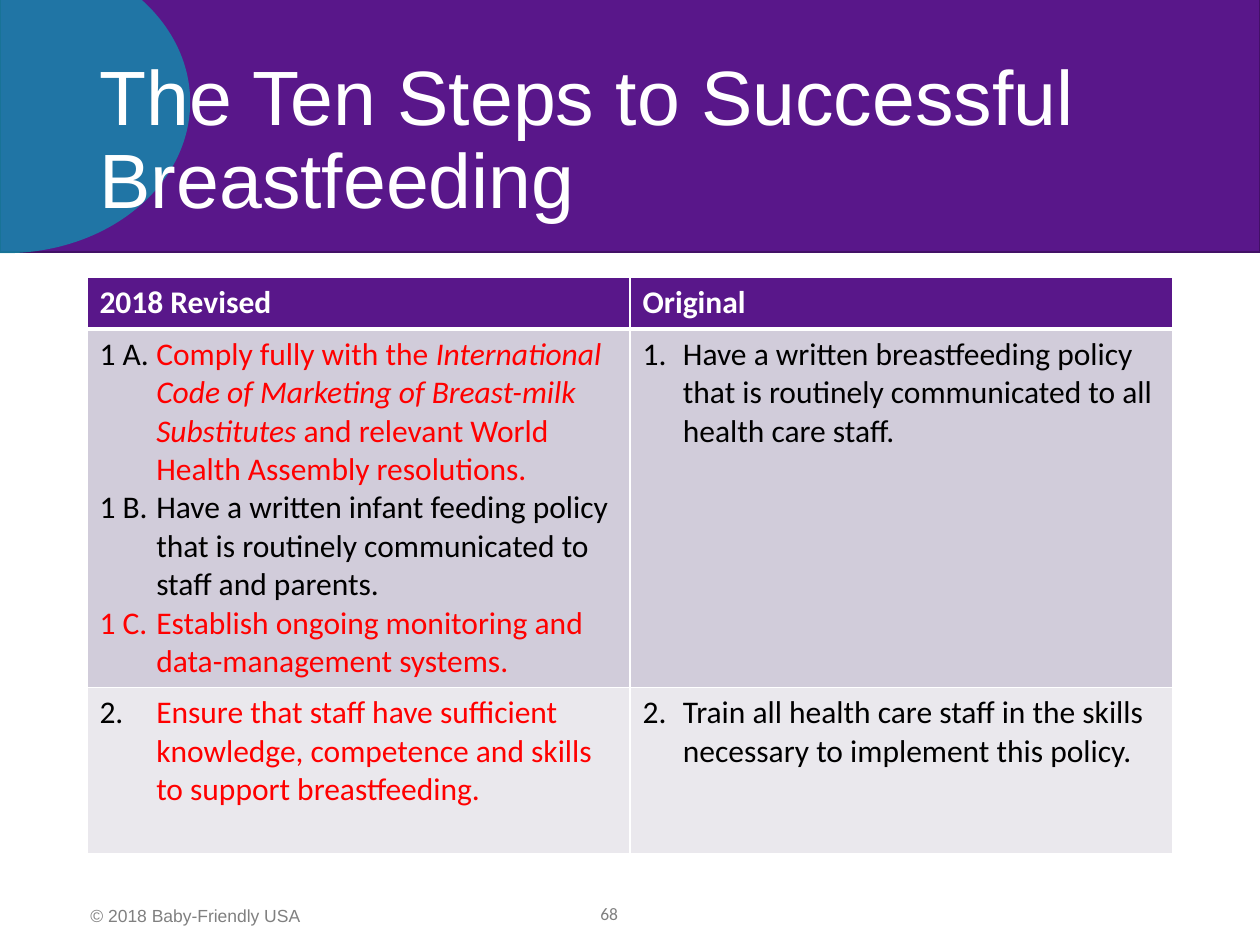
from dataclasses import dataclass

from lxml import etree
from pptx import Presentation
from pptx.dml.color import RGBColor
from pptx.enum.shapes import MSO_SHAPE
from pptx.enum.text import MSO_ANCHOR, PP_ALIGN
from pptx.oxml.ns import qn
from pptx.util import Inches, Pt

RECT, OVAL = MSO_SHAPE.RECTANGLE, MSO_SHAPE.OVAL
MIDDLE, TOP = MSO_ANCHOR.MIDDLE, MSO_ANCHOR.TOP
LEFT, CENTER = PP_ALIGN.LEFT, PP_ALIGN.CENTER
TITLE_ONLY = 5


@dataclass(frozen=True)
class Theme:
    """Colours, fonts and type sizes of the slide."""
    purple: str = "59178A"
    purple_edge: str = "421166"
    teal: str = "00ADB5"
    white: str = "FFFFFF"
    black: str = "000000"
    red: str = "FF0000"
    grey: str = "808080"
    bands: tuple = ("D1CCDA", "EAE8ED")
    head_font: str = "Arial"
    body_font: str = "Calibri"
    title_size: int = 44
    body_size: int = 18
    small_size: int = 10


T = Theme()
HEADINGS = ("2018 Revised", "Original")
HANGS = (0.45, 0.32)
ROW_HEIGHTS = (0.41, 2.83, 1.32)
STEPS = [
    (
        [
            [("1 A.\t", T.black, False),
             ("Comply fully with the ", T.red, False),
             ("International Code of Marketing of Breast-milk Substitutes", T.red, True),
             (" and relevant World Health Assembly resolutions.", T.red, False)],
            [("1 B.\tHave a written infant feeding policy that is routinely "
              "communicated to staff and parents.", T.black, False)],
            [("1 C.\tEstablish ongoing monitoring and data-management systems.",
              T.red, False)],
        ],
        [[("1.\tHave a written breastfeeding policy that is routinely "
           "communicated to all health care staff.", T.black, False)]],
    ),
    (
        [[("2.\t", T.black, False),
          ("Ensure that staff have sufficient knowledge, competence and skills "
           "to support breastfeeding.", T.red, False)]],
        [[("2.\tTrain all health care staff in the skills necessary to "
           "implement this policy.", T.black, False)]],
    ),
]


def rgb(color):
    """Turn a hex string into a colour."""
    return RGBColor.from_string(color)


def set_font(font, name, size, color):
    """Set the face, size and colour of a font."""
    font.name, font.size = name, Pt(size)
    font.color.rgb = rgb(color)


def add_filled(slide, kind, box, color):
    """Add a flat shape without outline or shadow."""
    sp = slide.shapes.add_shape(kind, *map(Inches, box))
    sp.shadow.inherit = False
    sp.fill.solid()
    sp.fill.fore_color.rgb = rgb(color)
    sp.line.fill.background()
    return sp


def add_banner(slide, box):
    """Draw the purple band, its translucent teal disc and the title."""
    x, y, w, h = box
    band = add_filled(slide, RECT, box, T.purple)
    band.line.color.rgb = rgb(T.purple_edge)
    band.line.width = Pt(1)
    disc = add_filled(slide, OVAL, (x - 1.42, y - 0.35, 2.93, 2.4), T.teal)
    clr = disc.fill._xPr.find(".//" + qn("a:srgbClr"))
    etree.SubElement(clr, qn("a:alpha"), val="63000")

    title = slide.shapes.title
    slide.shapes._spTree.append(title._element)
    title.left, title.top = Inches(x + 0.69), Inches(y + 0.44)
    title.width, title.height = Inches(w - 1.38), Inches(1.45)
    tf = title.text_frame
    tf.text = "The Ten Steps to Successful Breastfeeding"
    tf.word_wrap, tf.vertical_anchor = True, MIDDLE
    p = tf.paragraphs[0]
    p.alignment, p.line_spacing = LEFT, 0.9
    set_font(p.font, T.head_font, T.title_size, T.white)


def set_borders(cell, top, bottom):
    """Give a cell white borders, with its own top and bottom widths."""
    tcPr = cell._tc.get_or_add_tcPr()
    edges = (("a:lnL", 1), ("a:lnR", 1), ("a:lnT", top), ("a:lnB", bottom))
    for i, (tag, width) in enumerate(edges):
        ln = etree.Element(qn(tag), w=str(Pt(width)))
        fill = etree.SubElement(ln, qn("a:solidFill"))
        etree.SubElement(fill, qn("a:srgbClr"), val=T.white)
        tcPr.insert(i, ln)


def fill_cell(cell, paras, color, bold=False, hang=0):
    """Fill a cell with paragraphs of (text, colour, italic) runs."""
    cell.fill.solid()
    cell.fill.fore_color.rgb = rgb(color)
    tf = cell.text_frame
    for i, runs in enumerate(paras):
        p = tf.add_paragraph() if i else tf.paragraphs[0]
        if hang:
            pPr = p._p.get_or_add_pPr()
            pPr.set("marL", str(Inches(hang)))
            pPr.set("indent", str(-Inches(hang)))
        p.font.name, p.font.size, p.font.bold = T.body_font, Pt(T.body_size), bold
        for text, ink, italic in runs:
            r = p.add_run()
            r.text = text
            r.font.color.rgb, r.font.italic = rgb(ink), italic


def add_steps_table(slide, box):
    """Build the table that sets revised steps beside original ones."""
    size = len(ROW_HEIGHTS), len(HEADINGS)
    table = slide.shapes.add_table(*size, *map(Inches, box)).table
    for row, height in zip(table.rows, ROW_HEIGHTS):
        row.height = Inches(height)
    for col, (heading, hang) in enumerate(zip(HEADINGS, HANGS)):
        cell = table.cell(0, col)
        fill_cell(cell, [[(heading, T.white, False)]], T.purple, bold=True)
        set_borders(cell, 1, 3)
        for row, (step, band) in enumerate(zip(STEPS, T.bands), 1):
            cell = table.cell(row, col)
            fill_cell(cell, step[col], band, hang=hang)
            set_borders(cell, 3 if row == 1 else 1, 1)


def add_small_text(slide, box, text, font, align, anchor):
    """Add one line of grey footer text."""
    tf = slide.shapes.add_textbox(*map(Inches, box)).text_frame
    tf.text = text
    tf.word_wrap, tf.vertical_anchor = True, anchor
    p = tf.paragraphs[0]
    p.alignment = align
    set_font(p.font, font, T.small_size, T.grey)


def add_footer(slide, box):
    """Place the copyright line and the slide number."""
    x, y, w, h = box
    add_small_text(slide, (x, y + 0.08, 2.1, 0.27),
                   "© 2018 Baby-Friendly USA", T.head_font, LEFT, TOP)
    add_small_text(slide, (x + 3.09, y, 2.25, h), "68", T.body_font, CENTER, MIDDLE)


def main():
    """Build and save the slide."""
    prs = Presentation()
    prs.slide_width, prs.slide_height = Inches(10), Inches(7.5)
    slide = prs.slides.add_slide(prs.slide_layouts[TITLE_ONLY])
    add_banner(slide, (0, -0.04, 10, 2.04))
    add_steps_table(slide, (0.69, 2.2, 8.62, sum(ROW_HEIGHTS)))
    add_footer(slide, (0.62, 7.05, 8.76, 0.4))
    prs.save("out.pptx")


if __name__ == "__main__":
    main()
